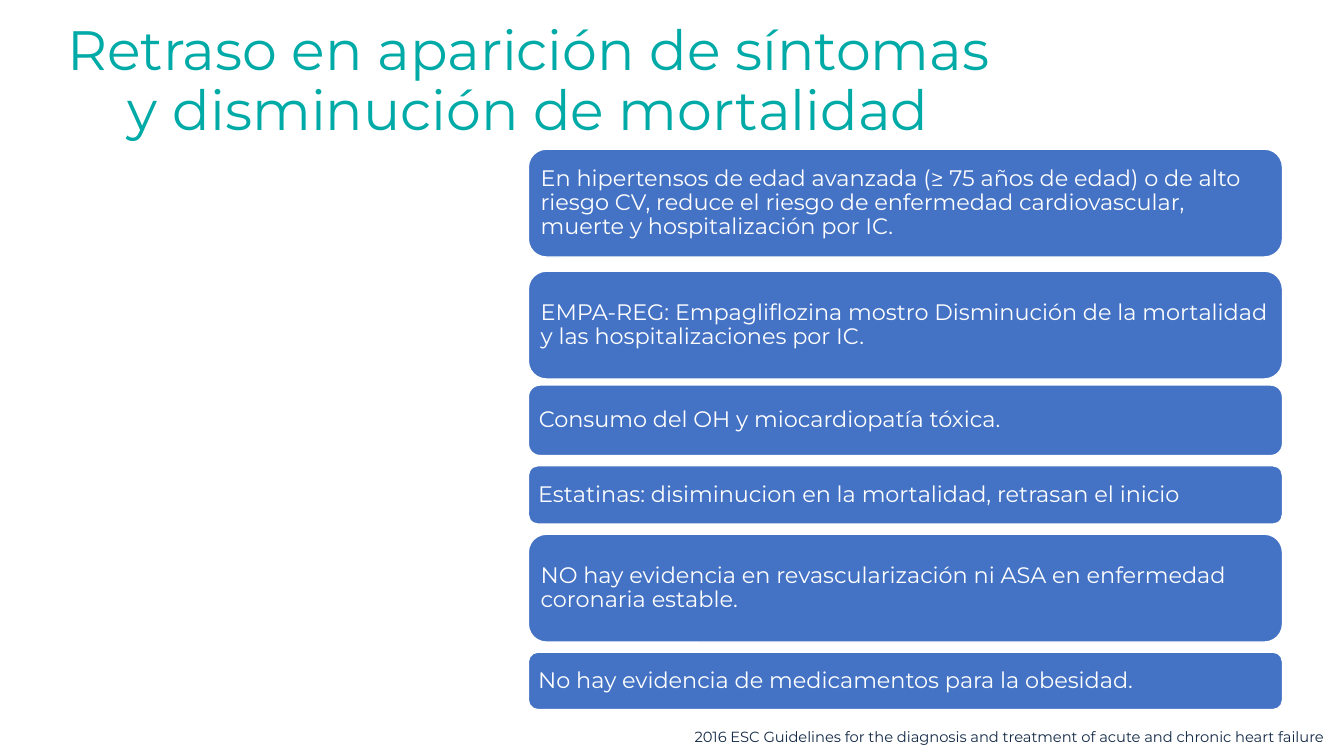
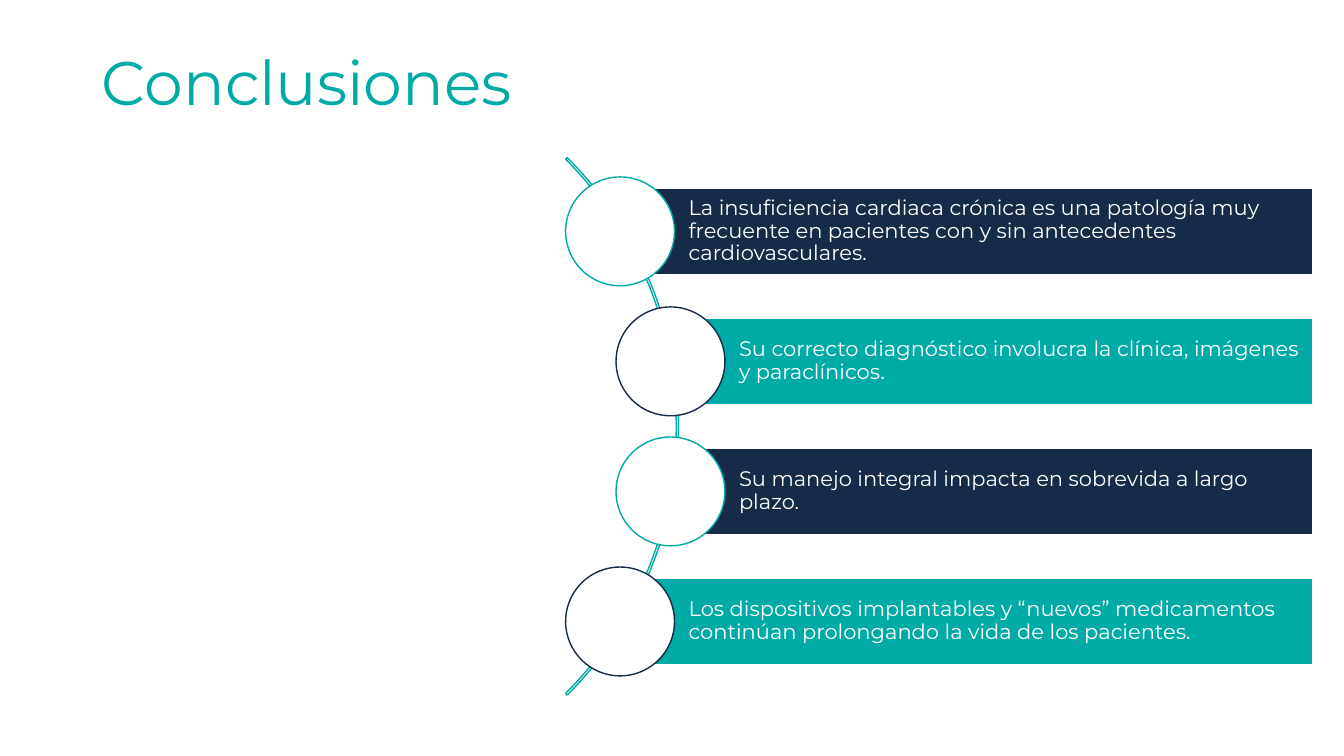
from pptx import Presentation
from pptx.dml.color import RGBColor
from pptx.enum.shapes import MSO_SHAPE
from pptx.enum.text import MSO_ANCHOR, PP_ALIGN
from pptx.util import Inches, Pt

COLORS = {"teal": "00AAA7", "navy": "152B48", "blue": "4472C4", "white": "FFFFFF"}
FONT = "Montserrat"

DELAY_TITLE = "Retraso en aparición de síntomas y disminución de mortalidad"
# Text, box height, gap below
DELAY_POINTS = [
    ("En hipertensos de edad avanzada (≥ 75 años de edad) o de alto riesgo CV, reduce el riesgo "
     "de enfermedad cardiovascular, muerte y hospitalización por IC.", 1.07, 0.14),
    ("EMPA-REG: Empagliflozina mostro Disminución de la mortalidad y las hospitalizaciones "
     "por IC.", 1.07, 0.06),
    ("Consumo del OH y miocardiopatía tóxica.", 0.7, 0.1),
    ("Estatinas: disiminucion en la mortalidad, retrasan el inicio", 0.58, 0.1),
    ("NO hay evidencia en revascularización ni ASA en enfermedad coronaria estable.", 1.07, 0.1),
    ("No hay evidencia de medicamentos para la obesidad.", 0.57, 0),
]
REFERENCE = ("2016 ESC Guidelines for the diagnosis and treatment of acute and "
             "chronic heart failure")

CONCLUSIONS_TITLE = "Conclusiones"
# Text runs with their fonts, left edge of the bar
CONCLUSIONS = [
    ([("La insuficiencia cardiaca crónica es una patología muy frecuente en pacientes con y sin "
       "antecedentes cardiovasculares.", FONT)], 6.15),
    ([("Su correcto diagnóstico involucra la clínica, imágenes y paraclínicos", FONT),
      (".", "Calibri")], 6.65),
    ([("Su manejo integral impacta en sobrevida a largo plazo.", FONT)], 6.65),
    ([("Los dispositivos implantables y “nuevos” medicamentos continúan prolongando la vida de "
       "los pacientes.", FONT)], 6.15),
]


def color(name):
    return RGBColor.from_string(COLORS[name])


def write(shape, runs, size, text_color, insets=(0.1, 0.05, 0.1, 0.05),
          align=PP_ALIGN.LEFT, spacing=0.9, anchor=MSO_ANCHOR.MIDDLE):
    """Fill a shape with one paragraph of (text, font) runs."""
    frame = shape.text_frame
    frame.word_wrap = True
    frame.vertical_anchor = anchor
    (frame.margin_left, frame.margin_top,
     frame.margin_right, frame.margin_bottom) = map(Inches, insets)
    para = frame.paragraphs[0]
    para.alignment = align
    para.line_spacing = spacing
    for text, font in runs:
        span = para.add_run()
        span.text = text
        span.font.name = font
        span.font.size = Pt(size)
        span.font.color.rgb = color(text_color)


def add_text_box(page, place, text, size, text_color, **style):
    box = page.shapes.add_textbox(*map(Inches, place))
    write(box, [(text, FONT)], size, text_color, **style)


def add_title(page, text, left, top, width, size):
    add_text_box(page, (left, top, width, 1.45), text, size, "teal", align=PP_ALIGN.CENTER)


def add_figure(page, kind, place, fill, line):
    shape = page.shapes.add_shape(kind, *map(Inches, place))
    shape.shadow.inherit = False
    if fill:
        shape.fill.solid()
        shape.fill.fore_color.rgb = color(fill)
    else:
        shape.fill.background()
    shape.line.color.rgb = color(line)
    shape.line.width = Pt(1)
    return shape


def build_delay(page):
    add_title(page, DELAY_TITLE, 0.42, 0.09, 9.64, 39.6)
    top = 1.48
    for text, height, gap in DELAY_POINTS:
        box = add_figure(page, MSO_SHAPE.ROUNDED_RECTANGLE, (5.24, top, 7.48, height),
                         "blue", "white")
        write(box, [(text, FONT)], 16, "white", insets=(0.07,) * 4)
        top += height + gap
    add_text_box(page, (6.79, 7.17, 6.55, 0.28), REFERENCE, 10.5, "navy",
                 spacing=1.0, anchor=MSO_ANCHOR.TOP)


def build_conclusions(page):
    add_title(page, CONCLUSIONS_TITLE, 0.68, 0.12, 4.73, 44)
    arc_left, arc_top, arc_size = -0.81, 0.46, 7.54
    arc = add_figure(page, MSO_SHAPE.BLOCK_ARC, (arc_left, arc_top, arc_size, arc_size),
                     None, "teal")
    for index, value in enumerate((189, 27, 0.003)):
        arc.adjustments[index] = value

    bar_right, bar_height, circle_size, step = 13.02, 0.86, 1.08, 1.29
    arc_middle = arc_top + arc_size / 2
    for index, (runs, left) in enumerate(CONCLUSIONS):
        middle = arc_middle + (index - (len(CONCLUSIONS) - 1) / 2) * step
        fill, outline = ("navy", "teal") if index % 2 == 0 else ("teal", "navy")
        bar = add_figure(page, MSO_SHAPE.RECTANGLE,
                         (left, middle - bar_height / 2, bar_right - left, bar_height),
                         fill, "white")
        write(bar, runs, 15, "white", insets=(0.68, 0.04, 0.04, 0.04))
        add_figure(page, MSO_SHAPE.OVAL,
                   (left - circle_size / 2, middle - circle_size / 2, circle_size, circle_size),
                   "white", outline)


def main():
    deck = Presentation()
    deck.slide_width, deck.slide_height = Inches(13.33), Inches(7.5)
    for build in (build_delay, build_conclusions):
        build(deck.slides.add_slide(deck.slide_layouts[6]))
    deck.save("out.pptx")


if __name__ == "__main__":
    main()
